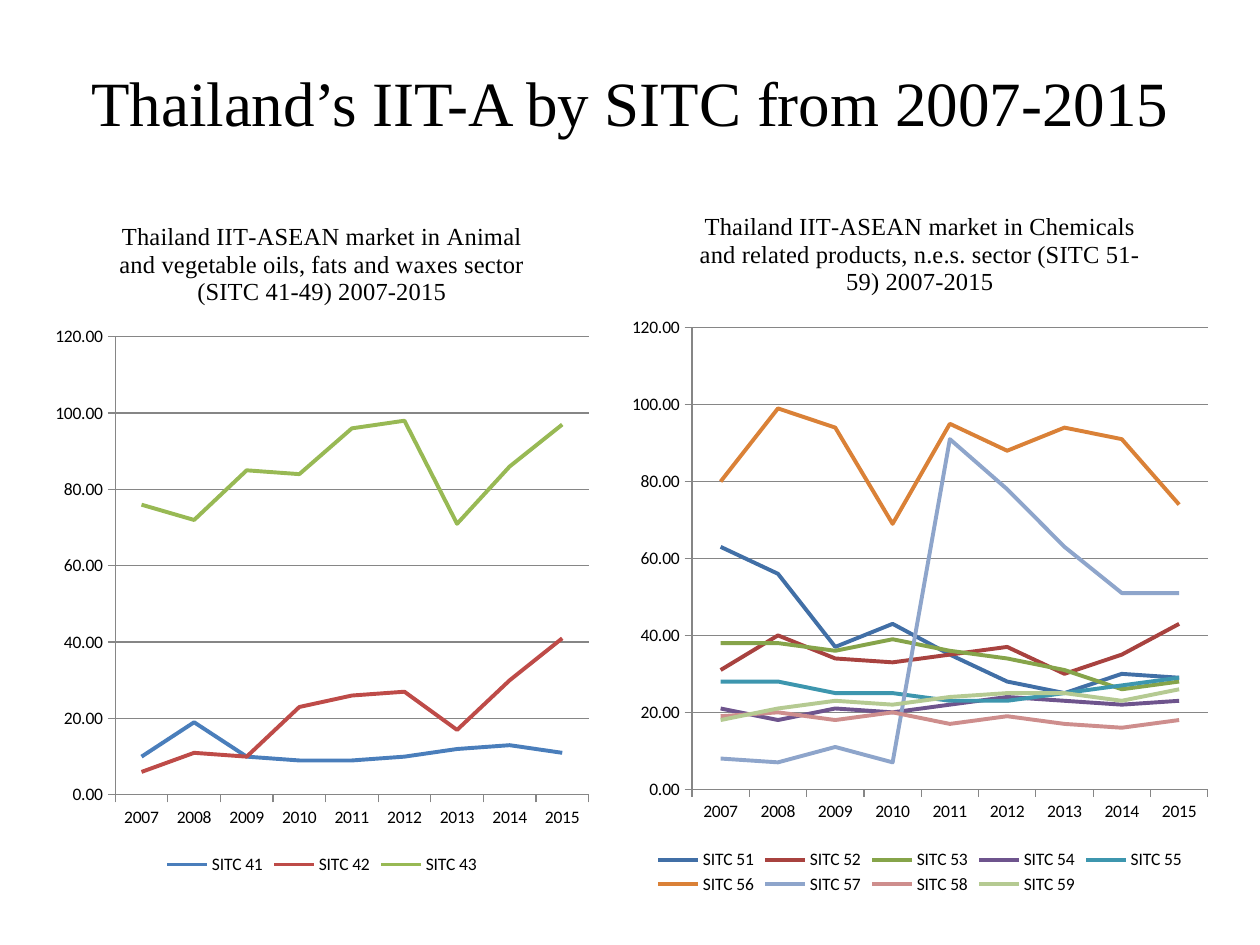
from pptx import Presentation
from pptx.chart.data import CategoryChartData
from pptx.dml.color import RGBColor
from pptx.enum.chart import XL_CHART_TYPE, XL_LEGEND_POSITION, XL_TICK_MARK
from pptx.enum.text import MSO_ANCHOR, PP_ALIGN
from pptx.util import Cm, Pt

BLACK = RGBColor(0x00, 0x00, 0x00)
GREY = RGBColor(0x86, 0x86, 0x86)
BLUE = RGBColor(0x4A, 0x7E, 0xBB)
RED = RGBColor(0xBE, 0x4B, 0x48)
GREEN = RGBColor(0x98, 0xB9, 0x54)
DARK_BLUE = RGBColor(0x41, 0x6F, 0xA6)
DARK_RED = RGBColor(0xA8, 0x42, 0x3F)
DARK_GREEN = RGBColor(0x86, 0xA4, 0x4A)
PURPLE = RGBColor(0x6E, 0x54, 0x8D)
TEAL = RGBColor(0x3D, 0x96, 0xAE)
ORANGE = RGBColor(0xDA, 0x81, 0x37)
PALE_BLUE = RGBColor(0x8E, 0xA5, 0xCB)
PALE_RED = RGBColor(0xCE, 0x8E, 0x8D)
PALE_GREEN = RGBColor(0xB5, 0xCA, 0x92)

TITLE = "Thailand’s IIT-A by SITC from 2007-2015"
YEARS = [str(year) for year in range(2007, 2016)]
CHARTS = [
    {
        "title": "Thailand IIT-ASEAN market in Animal and vegetable oils, "
                 "fats and waxes sector (SITC 41-49) 2007-2015",
        "box": (0.89, 3.94, 11.2, 13.79),
        "series": [
            ("SITC 41", BLUE, (10, 19, 10, 9, 9, 10, 12, 13, 11)),
            ("SITC 42", RED, (6, 11, 10, 23, 26, 27, 17, 30, 41)),
            ("SITC 43", GREEN, (76, 72, 85, 84, 96, 98, 71, 86, 97)),
        ],
    },
    {
        "title": "Thailand IIT-ASEAN market in Chemicals and related products, "
                 "n.e.s. sector (SITC 51-59) 2007-2015",
        "box": (12.5, 3.73, 12.09, 14.4),
        "series": [
            ("SITC 51", DARK_BLUE, (63, 56, 37, 43, 35, 28, 25, 30, 29)),
            ("SITC 52", DARK_RED, (31, 40, 34, 33, 35, 37, 30, 35, 43)),
            ("SITC 53", DARK_GREEN, (38, 38, 36, 39, 36, 34, 31, 26, 28)),
            ("SITC 54", PURPLE, (21, 18, 21, 20, 22, 24, 23, 22, 23)),
            ("SITC 55", TEAL, (28, 28, 25, 25, 23, 23, 25, 27, 29)),
            ("SITC 56", ORANGE, (80, 99, 94, 69, 95, 88, 94, 91, 74)),
            ("SITC 57", PALE_BLUE, (8, 7, 11, 7, 91, 78, 63, 51, 51)),
            ("SITC 58", PALE_RED, (19, 20, 18, 20, 17, 19, 17, 16, 18)),
            ("SITC 59", PALE_GREEN, (18, 21, 23, 22, 24, 25, 25, 23, 26)),
        ],
    },
]

BODY_FONT = {"name": "Calibri", "size": Pt(10)}
CHART_TITLE_FONT = {"name": "Times New Roman", "size": Pt(14), "bold": False}
TITLE_FONT = {"name": "Times New Roman", "size": Pt(36), "bold": False}
VALUE_AXIS = {"minimum_scale": 0, "maximum_scale": 120, "major_unit": 20,
              "has_major_gridlines": True}


def set_all(target, values):
    for name, value in values.items():
        setattr(target, name, value)


def set_font(font, values):
    set_all(font, values)
    font.color.rgb = BLACK


def set_line(line, color, width):
    line.color.rgb = color
    line.width = Pt(width)


def add_line_chart(slide, title, box, series):
    data = CategoryChartData(number_format="0.00")
    data.categories = YEARS
    for name, _, values in series:
        data.add_series(name, values)
    chart = slide.shapes.add_chart(
        XL_CHART_TYPE.LINE, *(Cm(v) for v in box), data).chart
    set_font(chart.font, BODY_FONT)

    chart.has_title = True
    chart.chart_title.include_in_layout = False
    p = chart.chart_title.text_frame.paragraphs[0]
    r = p.add_run()
    r.text = title
    set_font(p.font, CHART_TITLE_FONT)
    set_font(r.font, CHART_TITLE_FONT)

    chart.has_legend = True
    set_all(chart.legend, {"position": XL_LEGEND_POSITION.BOTTOM,
                           "include_in_layout": False})

    set_all(chart.value_axis, VALUE_AXIS)
    set_all(chart.value_axis.tick_labels,
            {"number_format": "0.00", "number_format_is_linked": False})
    set_line(chart.value_axis.major_gridlines.format.line, GREY, 0.75)
    for axis in (chart.category_axis, chart.value_axis):
        axis.major_tick_mark = XL_TICK_MARK.OUTSIDE
        set_line(axis.format.line, GREY, 0.75)

    plot = chart.plots[0]
    plot.vary_by_categories = False
    for line, (_, color, _) in zip(plot.series, series):
        line.smooth = False
        set_line(line.format.line, color, 2.25)


def main():
    prs = Presentation()
    prs.slide_width, prs.slide_height = Cm(25.4), Cm(19.05)
    s = prs.slides.add_slide(prs.slide_layouts[5])

    title = s.shapes.title
    set_all(title, {"left": Cm(1.27), "top": Cm(0.76),
                    "width": Cm(22.86), "height": Cm(2.57)})
    tf = title.text_frame
    set_all(tf, {"word_wrap": True, "vertical_anchor": MSO_ANCHOR.MIDDLE})
    p = tf.paragraphs[0]
    p.alignment = PP_ALIGN.CENTER
    r = p.add_run()
    r.text = TITLE
    set_font(r.font, TITLE_FONT)

    for chart in CHARTS:
        add_line_chart(s, **chart)
    prs.save("out.pptx")


if __name__ == "__main__":
    main()
